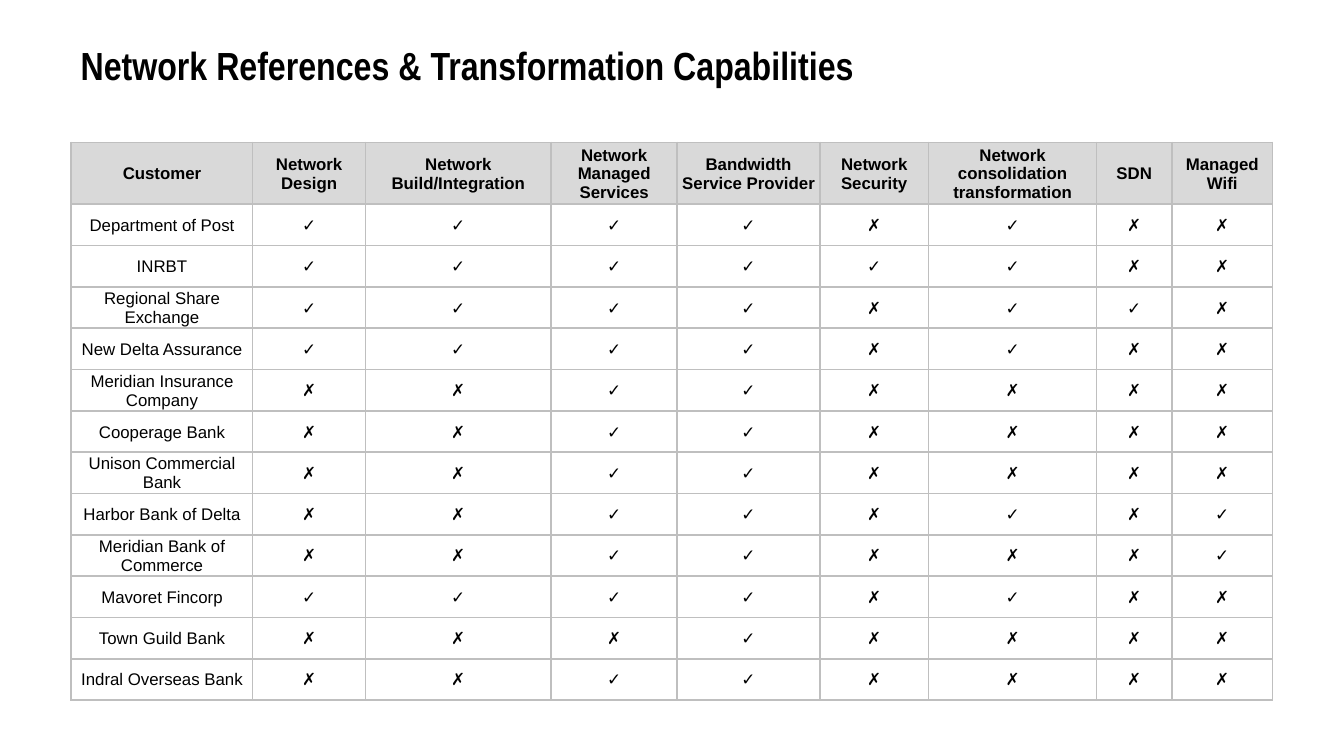
from dataclasses import dataclass

from lxml.etree import SubElement
from pptx import Presentation
from pptx.dml.color import RGBColor
from pptx.enum.text import MSO_ANCHOR, MSO_AUTO_SIZE, PP_ALIGN
from pptx.oxml.ns import qn
from pptx.util import Pt


@dataclass(frozen=True)
class Theme:
    ink: str = "000000"
    header_fill: str = "D9D9D9"
    grid: str = "BFBFBF"
    title_font: str = "Arial Narrow"
    table_font: str = "Arial"
    title_size: float = 21
    table_size: float = 9
    grid_width: float = 1


THEME = Theme()

HEADINGS = [
    "Customer", "Network Design", "Network Build/Integration",
    "Network Managed Services", "Bandwidth Service Provider",
    "Network Security", "Network consolidation transformation",
    "SDN", "Managed Wifi",
]
COLUMN_WIDTHS = [97.2, 60.48, 99.36, 67.68, 76.32, 58.32, 90, 40.32, 54]
HEADER_HEIGHT = 33.12
ROW_HEIGHT = 22.14

CAPABILITIES = [
    ("Department of Post", "✓✓✓✓✗✓✗✗"),
    ("INRBT", "✓✓✓✓✓✓✗✗"),
    ("Regional Share Exchange", "✓✓✓✓✗✓✓✗"),
    ("New Delta Assurance", "✓✓✓✓✗✓✗✗"),
    ("Meridian Insurance Company", "✗✗✓✓✗✗✗✗"),
    ("Cooperage Bank", "✗✗✓✓✗✗✗✗"),
    ("Unison Commercial Bank", "✗✗✓✓✗✗✗✗"),
    ("Harbor Bank of Delta", "✗✗✓✓✗✓✗✓"),
    ("Meridian Bank of Commerce", "✗✗✓✓✗✗✗✓"),
    ("Mavoret Fincorp", "✓✓✓✓✗✓✗✗"),
    ("Town Guild Bank", "✗✗✗✓✗✗✗✗"),
    ("Indral Overseas Bank", "✗✗✓✓✗✗✗✗"),
]


def write_text(frame, text, *, font, size, bold=False, align=PP_ALIGN.LEFT):
    paragraph = frame.paragraphs[0]
    paragraph.alignment = align
    run = paragraph.add_run()
    run.text = text
    run.font.name = font
    run.font.size = Pt(size)
    run.font.bold = bold
    run.font.color.rgb = RGBColor.from_string(THEME.ink)


def add_title(slide, text):
    title = slide.shapes.title
    title.left, title.top, title.width, title.height = Pt(36), Pt(18.72), Pt(576), Pt(32.4)
    frame = title.text_frame
    frame.auto_size = MSO_AUTO_SIZE.NONE
    frame.word_wrap = True
    frame.vertical_anchor = MSO_ANCHOR.MIDDLE
    write_text(frame, text, font=THEME.title_font, size=THEME.title_size, bold=True)


def set_borders(cell):
    properties = cell._tc.get_or_add_tcPr()
    for position, side in enumerate(("a:lnL", "a:lnR", "a:lnT", "a:lnB")):
        line = SubElement(properties, qn(side), w=str(Pt(THEME.grid_width)))
        fill = SubElement(line, qn("a:solidFill"))
        SubElement(fill, qn("a:srgbClr"), val=THEME.grid)
        properties.insert(position, line)


def fill_cell(cell, text, is_header):
    cell.margin_left = cell.margin_right = cell.margin_top = Pt(0.72)
    cell.margin_bottom = Pt(0)
    cell.vertical_anchor = MSO_ANCHOR.MIDDLE
    if is_header:
        cell.fill.solid()
        cell.fill.fore_color.rgb = RGBColor.from_string(THEME.header_fill)
    else:
        cell.fill.background()
    set_borders(cell)
    write_text(cell.text_frame, text, font=THEME.table_font, size=THEME.table_size,
               bold=is_header, align=PP_ALIGN.CENTER)


def add_capability_table(slide):
    rows = [HEADINGS] + [[customer, *marks] for customer, marks in CAPABILITIES]
    heights = [HEADER_HEIGHT] + [ROW_HEIGHT] * len(CAPABILITIES)
    table = slide.shapes.add_table(
        len(rows), len(HEADINGS), Pt(38.16), Pt(76.32),
        Pt(sum(COLUMN_WIDTHS)), Pt(sum(heights))).table
    table.first_row = table.horz_banding = False
    for column, width in zip(table.columns, COLUMN_WIDTHS):
        column.width = Pt(width)
    for row_index, (row, texts, height) in enumerate(zip(table.rows, rows, heights)):
        row.height = Pt(height)
        for cell, text in zip(row.cells, texts):
            fill_cell(cell, text, is_header=row_index == 0)


def main():
    presentation = Presentation()
    presentation.slide_width, presentation.slide_height = Pt(720), Pt(405)
    slide = presentation.slides.add_slide(presentation.slide_layouts.get_by_name("Title Only"))
    add_capability_table(slide)
    add_title(slide, "Network References & Transformation Capabilities")
    presentation.save("out.pptx")


if __name__ == "__main__":
    main()
